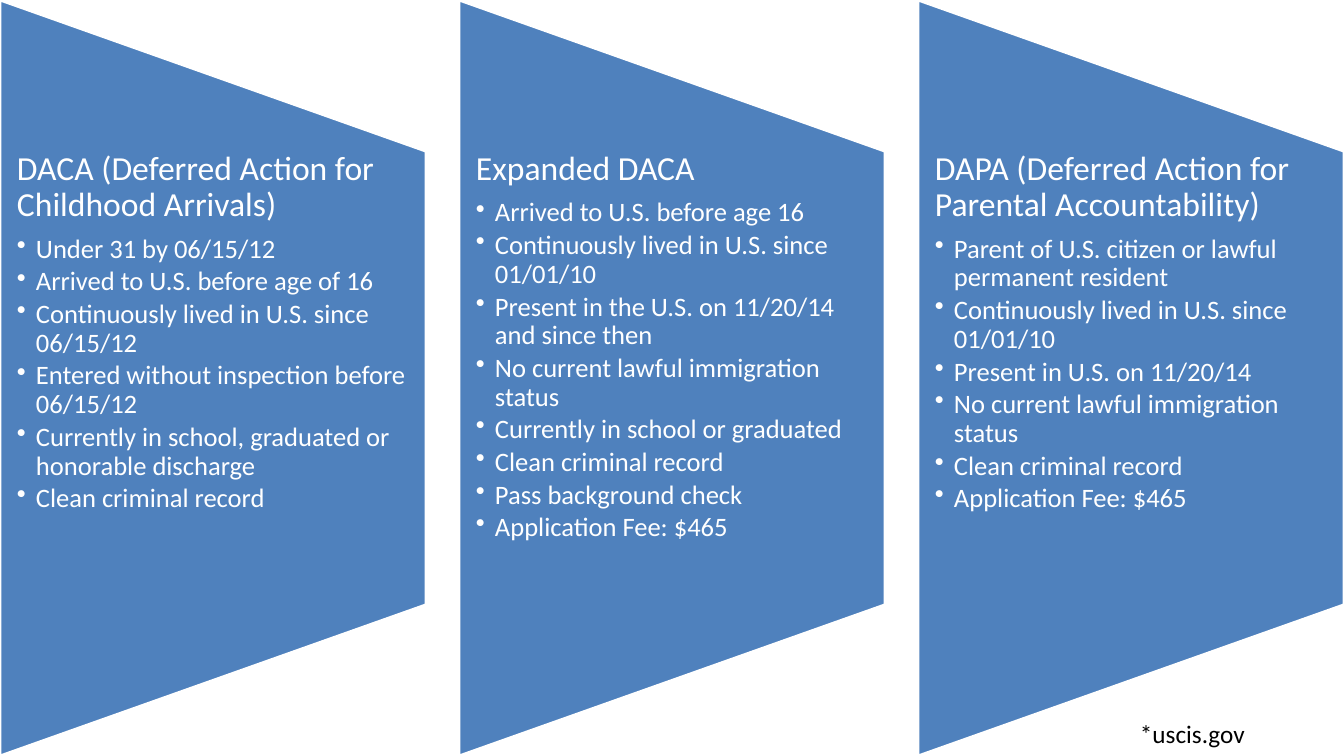
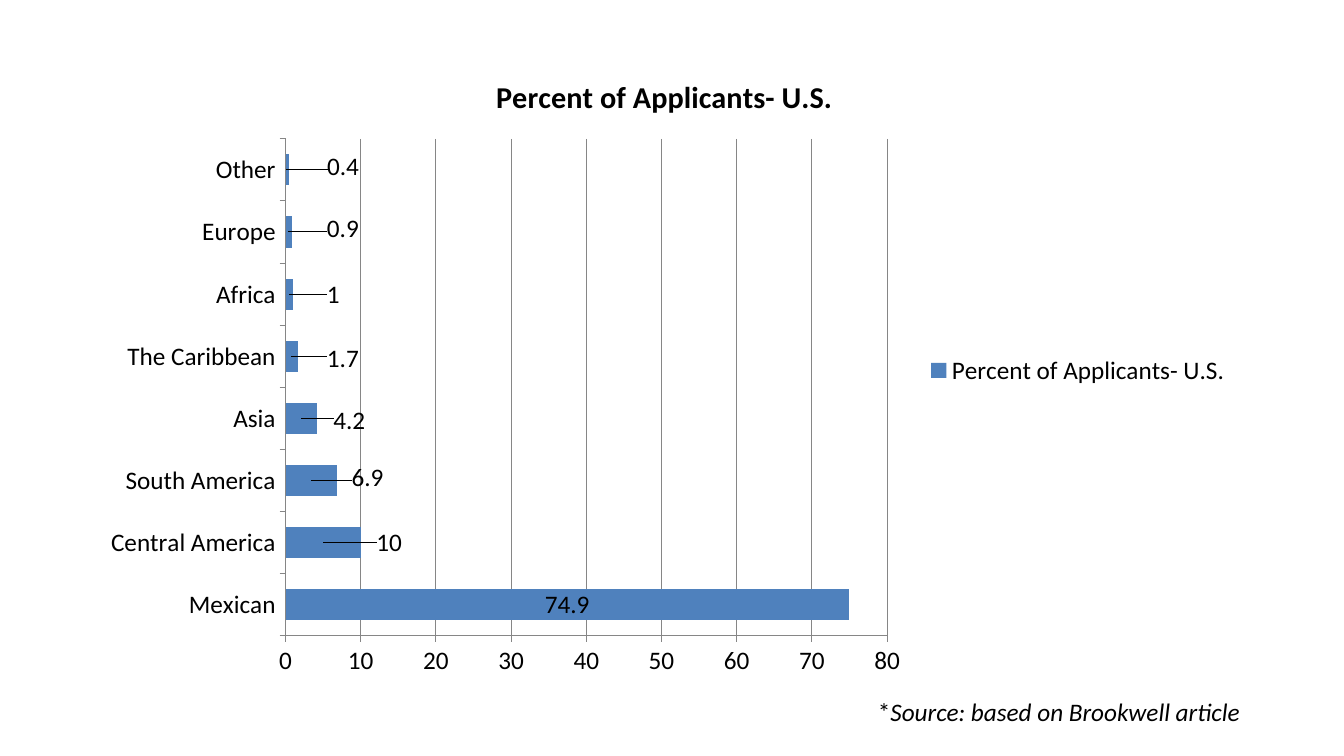
from pptx import Presentation
from pptx.chart.data import CategoryChartData
from pptx.dml.color import RGBColor
from pptx.enum.chart import XL_CHART_TYPE, XL_LEGEND_POSITION, XL_TICK_MARK
from pptx.enum.shapes import MSO_SHAPE
from pptx.enum.text import MSO_ANCHOR, MSO_AUTO_SIZE
from pptx.oxml import parse_xml
from pptx.oxml.ns import nsdecls
from pptx.util import Emu, Pt

BLUE, WHITE, BLACK, GREY = "4F81BD", "FFFFFF", "000000", "868686"
FONT = "Calibri"
WIDE, HIGH = 1344, 756
PANEL, PITCH = 426, 459
INDENT = 19
CHART = (88, 52, 1153, 637)

HEAD = {"size": Pt(24), "name": FONT}
ITEM = {"size": Pt(19), "name": FONT}
NOTE = {"size": Pt(18), "name": FONT}
TITLE = {"size": Pt(21.6), "name": FONT, "bold": True}

PLANS = [
    ("DACA (Deferred Action for Childhood Arrivals)", [
        "Under 31 by 06/15/12",
        "Arrived to U.S. before age of 16",
        "Continuously lived in U.S. since 06/15/12",
        "Entered without inspection before 06/15/12",
        "Currently in school, graduated or honorable discharge",
        "Clean criminal record",
    ]),
    ("Expanded DACA", [
        "Arrived to U.S. before age 16",
        "Continuously lived in U.S. since 01/01/10",
        "Present in the U.S. on 11/20/14 and since then",
        "No current lawful immigration status",
        "Currently in school or graduated",
        "Clean criminal record",
        "Pass background check",
        "Application Fee: $465",
    ]),
    ("DAPA (Deferred Action for Parental Accountability)", [
        "Parent of U.S. citizen or lawful permanent resident",
        "Continuously lived in U.S. since 01/01/10",
        "Present in U.S. on 11/20/14",
        "No current lawful immigration status",
        "Clean criminal record",
        "Application Fee: $465",
    ]),
]

SHARES = [
    ("Mexican", 74.9, None),
    ("Central America", 10, (66, 0)),
    ("South America", 6.9, (56, -3)),
    ("Asia", 4.2, (48, 2)),
    ("The Caribbean", 1.7, (51, 2)),
    ("Africa", 1, (44, 0)),
    ("Europe", 0.9, (54, -3)),
    ("Other", 0.4, (56, -3)),
]


def px(count):
    return Emu(round(count * 914400 / 100.8))


def box(*sides):
    return [px(side) for side in sides]


def tint(code):
    return RGBColor.from_string(code)


def style(thing, values):
    for name, value in values.items():
        setattr(thing, name, value)


def dye(font, values, code):
    style(font, values)
    font.color.rgb = tint(code)


def write(para, text, look, code):
    run = para.add_run()
    run.text = text
    dye(run.font, look, code)


def dot(para):
    props = para._p.get_or_add_pPr()
    props.set("marL", str(px(INDENT)))
    props.set("indent", str(-px(INDENT)))
    props.append(parse_xml(f'<a:buChar {nsdecls("a")} char="•"/>'))


def add_panel(slide, left, head, items):
    shape = slide.shapes.add_shape(
        MSO_SHAPE.FLOWCHART_MANUAL_OPERATION,
        *box(left + (PANEL - HIGH) // 2, (HIGH - PANEL) // 2, HIGH, PANEL))
    shape.rotation = 270
    shape.shadow.inherit = False
    shape.fill.solid()
    shape.fill.fore_color.rgb = tint(BLUE)
    shape.line.color.rgb = tint(WHITE)
    shape.line.width = Pt(2)

    frame = slide.shapes.add_textbox(*box(left, 151, PANEL, 454)).text_frame
    style(frame, {
        "word_wrap": True, "vertical_anchor": MSO_ANCHOR.TOP,
        "margin_left": px(17), "margin_right": px(17),
        "margin_top": 0, "margin_bottom": 0,
    })
    para = frame.paragraphs[0]
    style(para, {"line_spacing": 0.9, "space_after": Pt(8.4)})
    write(para, head, HEAD, WHITE)
    for item in items:
        para = frame.add_paragraph()
        style(para, {"level": 1, "line_spacing": 0.9, "space_after": Pt(2.8)})
        dot(para)
        write(para, item, ITEM, WHITE)


def add_note(slide, place, parts):
    frame = slide.shapes.add_textbox(*box(*place)).text_frame
    style(frame, {"word_wrap": True, "auto_size": MSO_AUTO_SIZE.SHAPE_TO_FIT_TEXT})
    for text, slant in parts:
        write(frame.paragraphs[0], text, NOTE | {"italic": slant}, BLACK)


def shift(series, spot, move):
    dye(series.points[spot].data_label.font, NOTE, BLACK)
    label = series._element.xpath(f"c:dLbls/c:dLbl[c:idx/@val={spot}]")[0]
    for old in label.xpath("c:layout"):
        label.remove(old)
    right, down = move[0] / CHART[2], move[1] / CHART[3]
    label.insert(1, parse_xml(
        f'<c:layout {nsdecls("c")}><c:manualLayout>'
        f'<c:x val="{right:.4f}"/><c:y val="{down:.4f}"/>'
        '</c:manualLayout></c:layout>'))


def add_bars(slide, title, shares):
    data = CategoryChartData()
    data.categories = [name for name, _, _ in shares]
    data.add_series(title, [share for _, share, _ in shares])
    chart = slide.shapes.add_chart(
        XL_CHART_TYPE.BAR_STACKED, *box(*CHART), data).chart
    dye(chart.font, NOTE, BLACK)
    chart.has_title = True
    frame = chart.chart_title.text_frame
    write(frame.paragraphs[0], title, TITLE, BLACK)
    chart.has_legend = True
    style(chart.legend, {
        "position": XL_LEGEND_POSITION.RIGHT, "include_in_layout": False})

    for axis in (chart.category_axis, chart.value_axis):
        style(axis, {
            "major_tick_mark": XL_TICK_MARK.OUTSIDE,
            "minor_tick_mark": XL_TICK_MARK.NONE,
        })
        axis.format.line.color.rgb = tint(GREY)
    chart.value_axis.has_major_gridlines = True
    chart.value_axis.major_gridlines.format.line.color.rgb = tint(GREY)

    plot = chart.plots[0]
    style(plot, {"gap_width": 100, "overlap": 100, "vary_by_categories": False})
    series = plot.series[0]
    series.format.fill.solid()
    series.format.fill.fore_color.rgb = tint(BLUE)
    series.data_labels.show_value = True
    dye(series.data_labels.font, NOTE, BLACK)
    for spot, (_, _, move) in enumerate(shares):
        if move:
            shift(series, spot, move)


def main():
    deck = Presentation()
    style(deck, {"slide_width": px(WIDE), "slide_height": px(HIGH)})
    blank = deck.slide_layouts[6]

    slide = deck.slides.add_slide(blank)
    for spot, (head, items) in enumerate(PLANS):
        add_panel(slide, spot * PITCH, head, items)
    add_note(slide, (1130, 713, 193, 40), [("*uscis.gov", False)])

    slide = deck.slides.add_slide(blank)
    add_bars(slide, "Percent of Applicants- U.S.", SHARES)
    add_note(slide, (868, 691, 444, 40), [
        ("*", False), ("Source: based on Brookwell article", True)])

    deck.save("out.pptx")


if __name__ == "__main__":
    main()
